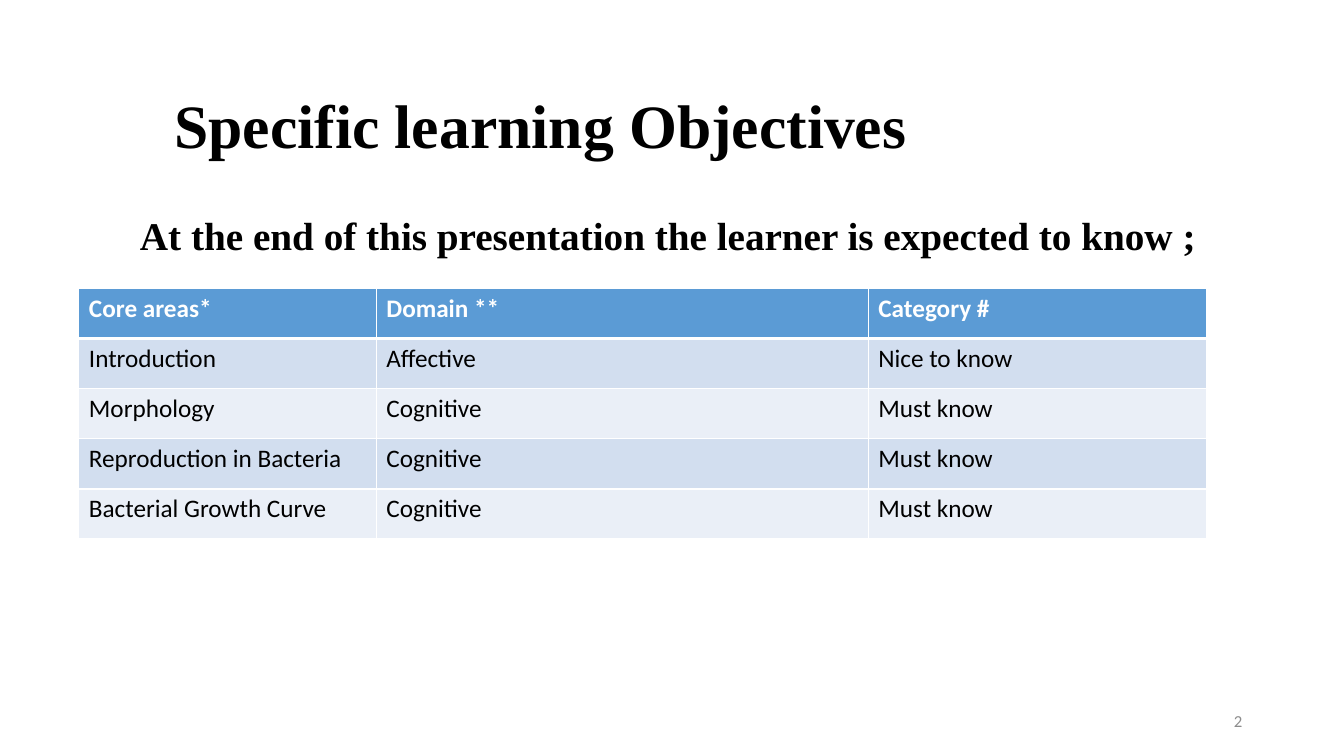
from dataclasses import dataclass

from lxml import etree
from pptx import Presentation
from pptx.dml.color import RGBColor
from pptx.enum.text import MSO_ANCHOR, MSO_AUTO_SIZE, PP_ALIGN
from pptx.oxml.ns import qn
from pptx.util import Inches, Pt

LEFT, RIGHT = PP_ALIGN.LEFT, PP_ALIGN.RIGHT
TOP, MIDDLE = MSO_ANCHOR.TOP, MSO_ANCHOR.MIDDLE
NO_AUTOFIT = MSO_AUTO_SIZE.NONE
TITLE_ONLY = 5


@dataclass(frozen=True)
class Theme:
    heading_font: str = "Times New Roman"
    body_font: str = "Calibri"
    title_size: int = 44
    lead_size: int = 28
    table_size: int = 18
    number_size: int = 12
    ink: str = "000000"
    paper: str = "FFFFFF"
    muted: str = "8C8C8C"
    header: str = "5B9BD5"
    bands: tuple = ("D2DEEF", "EAEFF7")
    rule: int = 1
    header_rule: int = 3


class SlideBuilder:
    def __init__(self, deck, theme):
        self.deck = deck
        self.theme = theme
        self.slide = deck.slides.add_slide(deck.slide_layouts[TITLE_ONLY])

    def area(self, left, top, width, height):
        across, down = self.deck.slide_width, self.deck.slide_height
        return (int(left * across / 100), int(top * down / 100),
                int(width * across / 100), int(height * down / 100))

    def set_words(self, frame, words, font, size, color, bold=False, align=LEFT):
        frame.text = words
        paragraph = frame.paragraphs[0]
        paragraph.alignment = align
        style = paragraph.runs[0].font
        style.name, style.size, style.bold = font, Pt(size), bold
        style.color.rgb = RGBColor.from_string(color)
        return paragraph

    def title(self, words, area):
        heading = self.slide.shapes.title
        heading.left, heading.top, heading.width, heading.height = self.area(*area)
        frame = heading.text_frame
        frame.auto_size, frame.vertical_anchor = NO_AUTOFIT, MIDDLE
        paragraph = self.set_words(frame, words, self.theme.heading_font,
                                   self.theme.title_size, self.theme.ink, True)
        paragraph.line_spacing = 0.9

    def text(self, words, area, font, size, color, bold=False, align=LEFT, anchor=TOP):
        frame = self.slide.shapes.add_textbox(*self.area(*area)).text_frame
        frame.word_wrap, frame.vertical_anchor = True, anchor
        self.set_words(frame, words, font, size, color, bold, align)

    def borders(self, cell, is_header, below_header):
        properties = cell._tc.get_or_add_tcPr()
        widths = {side: self.theme.rule for side in ("lnL", "lnR", "lnT", "lnB")}
        if is_header:
            widths["lnB"] = self.theme.header_rule
        if below_header:
            widths["lnT"] = self.theme.header_rule
        for side, width in widths.items():
            line = etree.SubElement(properties, qn(f"a:{side}"), w=str(Pt(width)))
            fill = etree.SubElement(line, qn("a:solidFill"))
            etree.SubElement(fill, qn("a:srgbClr"), val=self.theme.paper)

    def table(self, rows, area, column_shares):
        left, top, width, height = self.area(*area)
        grid = self.slide.shapes.add_table(
            len(rows), len(column_shares), left, top, width, height).table
        for column, share in zip(grid.columns, column_shares):
            column.width = int(width * share / sum(column_shares))
        for row_index, row in enumerate(rows):
            is_header = row_index == 0
            band = self.theme.header if is_header else self.theme.bands[(row_index - 1) % 2]
            ink = self.theme.paper if is_header else self.theme.ink
            for column_index, words in enumerate(row):
                cell = grid.cell(row_index, column_index)
                self.borders(cell, is_header, row_index == 1)
                cell.fill.solid()
                cell.fill.fore_color.rgb = RGBColor.from_string(band)
                self.set_words(cell.text_frame, words, self.theme.body_font,
                               self.theme.table_size, ink, is_header)


def main():
    deck = Presentation()
    deck.slide_width, deck.slide_height = Inches(13.33), Inches(7.5)
    theme = Theme()
    objectives = SlideBuilder(deck, theme)
    objectives.title("Specific learning Objectives", (12.22, 8.93, 76, 16.13))
    objectives.table(
        [
            ("Core areas*", "Domain **", "Category #"),
            ("Introduction", "Affective", "Nice to know"),
            ("Morphology", "Cognitive", "Must know"),
            ("Reproduction in Bacteria", "Cognitive", "Must know"),
            ("Bacterial Growth Curve", "Cognitive", "Must know"),
        ],
        (5.87, 38.13, 83.95, 33.2),
        (2.95, 4.88, 3.36),
    )
    objectives.text("At the end of this presentation the learner is expected to know ;",
                    (9.68, 27.33, 80.4, 7.6), theme.heading_font,
                    theme.lead_size, theme.ink, bold=True)
    objectives.text("2", (70.67, 92.67, 22.5, 5.33), theme.body_font,
                    theme.number_size, theme.muted, align=RIGHT, anchor=MIDDLE)
    deck.save("out.pptx")


if __name__ == "__main__":
    main()
